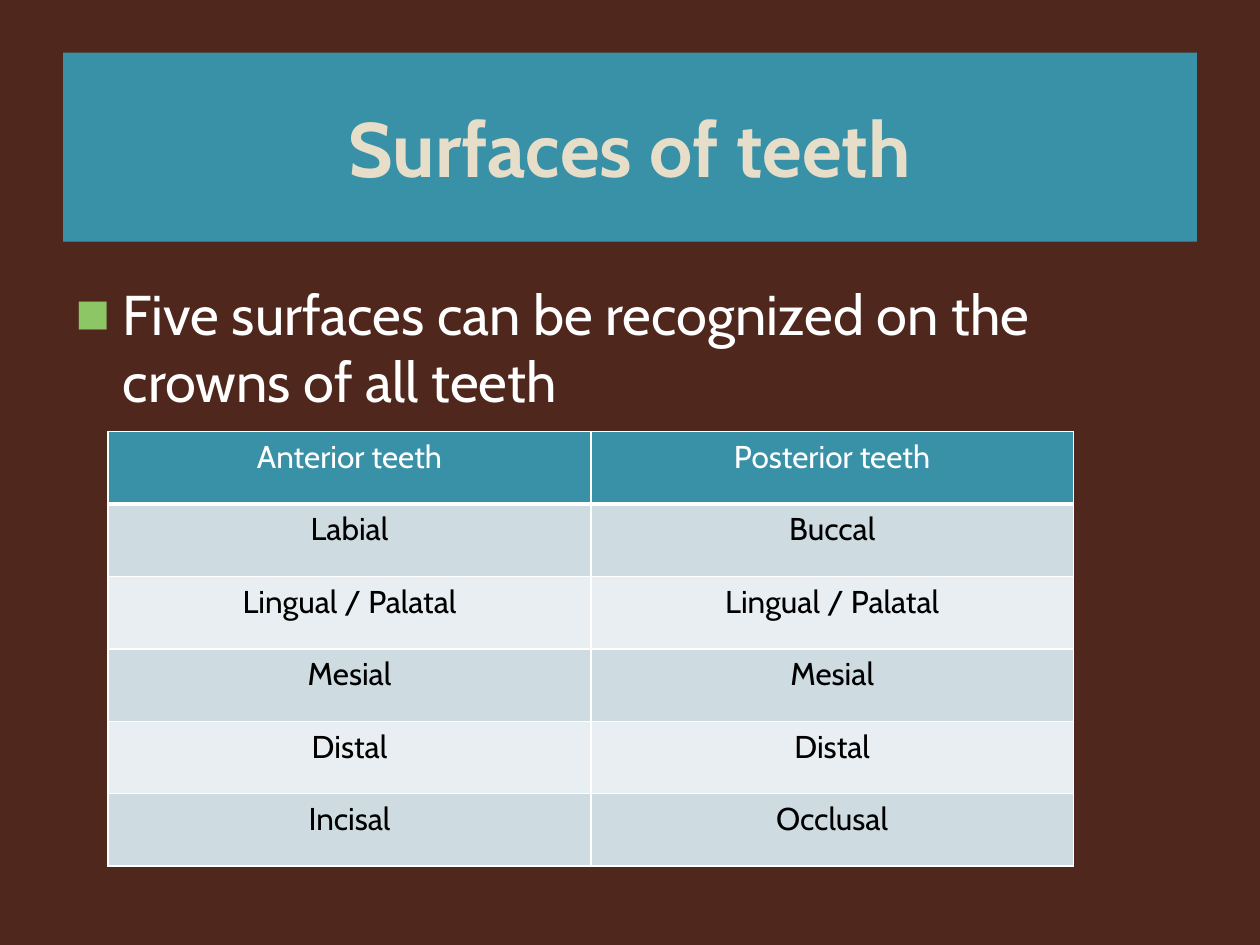
from typing import NamedTuple

from lxml import etree
from pptx import Presentation
from pptx import util as u
from pptx.dml.color import RGBColor
from pptx.enum import text
from pptx.oxml import parse_xml
from pptx.oxml.ns import nsdecls, qn

FONT = "Cabin"
BROWN, TEAL, CREAM, GREEN = "4F271C", "3891A7", "E7DEC9", "8DC765"
WHITE, BLACK = "FFFFFF", "000000"
BANDS = ("CEDCE1", "E8EEF1")


class Box(NamedTuple):
    left: float
    top: float
    width: float
    height: float

    def lengths(self) -> list[u.Cm]:
        return [u.Cm(value) for value in self]


class TeethRow(NamedTuple):
    anterior: str
    posterior: str


TITLE_BOX = Box(1.27, 1.06, 22.86, 3.81)
BODY_BOX = Box(1.27, 5.5, 22.86, 11.43)
TABLE_BOX = Box(2.18, 8.7, 19.46, 8.76)
ROWS = [
    TeethRow("Anterior teeth", "Posterior teeth"),
    TeethRow("Labial", "Buccal"),
    TeethRow("Lingual / Palatal", "Lingual / Palatal"),
    TeethRow("Mesial", "Mesial"),
    TeethRow("Distal", "Distal"),
    TeethRow("Incisal", "Occlusal"),
]


def rgb(value: str) -> RGBColor:
    return RGBColor.from_string(value)


def paint(target, color: str) -> None:
    target.fill.solid()
    target.fill.fore_color.rgb = rgb(color)


def place(sp, box: Box) -> None:
    sp.left, sp.top, sp.width, sp.height = box.lengths()


def write(tf, words: str, size: int, color: str, bold: bool = False, align=None):
    tf.text = words
    p = tf.paragraphs[0]
    p.alignment = align
    font = p.runs[0].font
    font.name, font.size, font.bold = FONT, u.Pt(size), bold
    font.color.rgb = rgb(color)
    return p


def add_bullet(p, char: str, color: str, percent: int, indent: float) -> None:
    pPr = p._p.get_or_add_pPr()
    pPr.set("marL", str(u.Cm(indent)))
    pPr.set("indent", str(-u.Cm(indent)))
    color_el = etree.SubElement(pPr, qn("a:buClr"))
    etree.SubElement(color_el, qn("a:srgbClr"), val=color)
    etree.SubElement(pPr, qn("a:buSzPct"), val=str(percent * 1000))
    etree.SubElement(pPr, qn("a:buFont"), typeface=FONT)
    etree.SubElement(pPr, qn("a:buChar"), char=char)


def add_borders(cell, bottom: int) -> None:
    tcPr = cell._tc.get_or_add_tcPr()
    sides = {"lnL": 1, "lnR": 1, "lnT": 1, "lnB": bottom}
    for i, (side, points) in enumerate(sides.items()):
        tcPr.insert(i, parse_xml(
            f'<a:{side} {nsdecls("a")} w="{u.Pt(points)}"><a:solidFill>'
            f'<a:srgbClr val="{WHITE}"/></a:solidFill></a:{side}>'))


def add_teeth_table(s, box: Box, rows: list[TeethRow]) -> None:
    table = s.shapes.add_table(len(rows), 2, *box.lengths()).table
    for i, row in enumerate(rows):
        header = i == 0
        for j, words in enumerate(row):
            cell = table.cell(i, j)
            write(cell.text_frame, words, 18, WHITE if header else BLACK,
                  align=text.PP_ALIGN.CENTER)
            paint(cell, TEAL if header else BANDS[(i - 1) % 2])
            add_borders(cell, bottom=3 if header else 1)


def main() -> None:
    prs = Presentation()
    prs.slide_width, prs.slide_height = u.Cm(25.4), u.Cm(19.05)
    s = prs.slides.add_slide(prs.slide_layouts[1])
    paint(s.background, BROWN)

    # Title band
    title = s.shapes.title
    place(title, TITLE_BOX)
    paint(title, TEAL)
    title.text_frame.auto_size = text.MSO_AUTO_SIZE.NONE
    title.text_frame.vertical_anchor = text.MSO_ANCHOR.MIDDLE
    write(title.text_frame, "Surfaces of teeth", 44, CREAM, True,
          text.PP_ALIGN.CENTER)

    # Bulleted statement
    body = s.placeholders[1]
    place(body, BODY_BOX)
    body.text_frame.auto_size = text.MSO_AUTO_SIZE.NONE
    p = write(body.text_frame,
              "Five surfaces can be recognized on the crowns of all teeth",
              32, WHITE)
    p.space_before = u.Pt(0)
    add_bullet(p, "■", GREEN, 65, 0.95)

    # Surfaces by tooth group
    add_teeth_table(s, TABLE_BOX, ROWS)

    prs.save("out.pptx")


if __name__ == "__main__":
    main()
